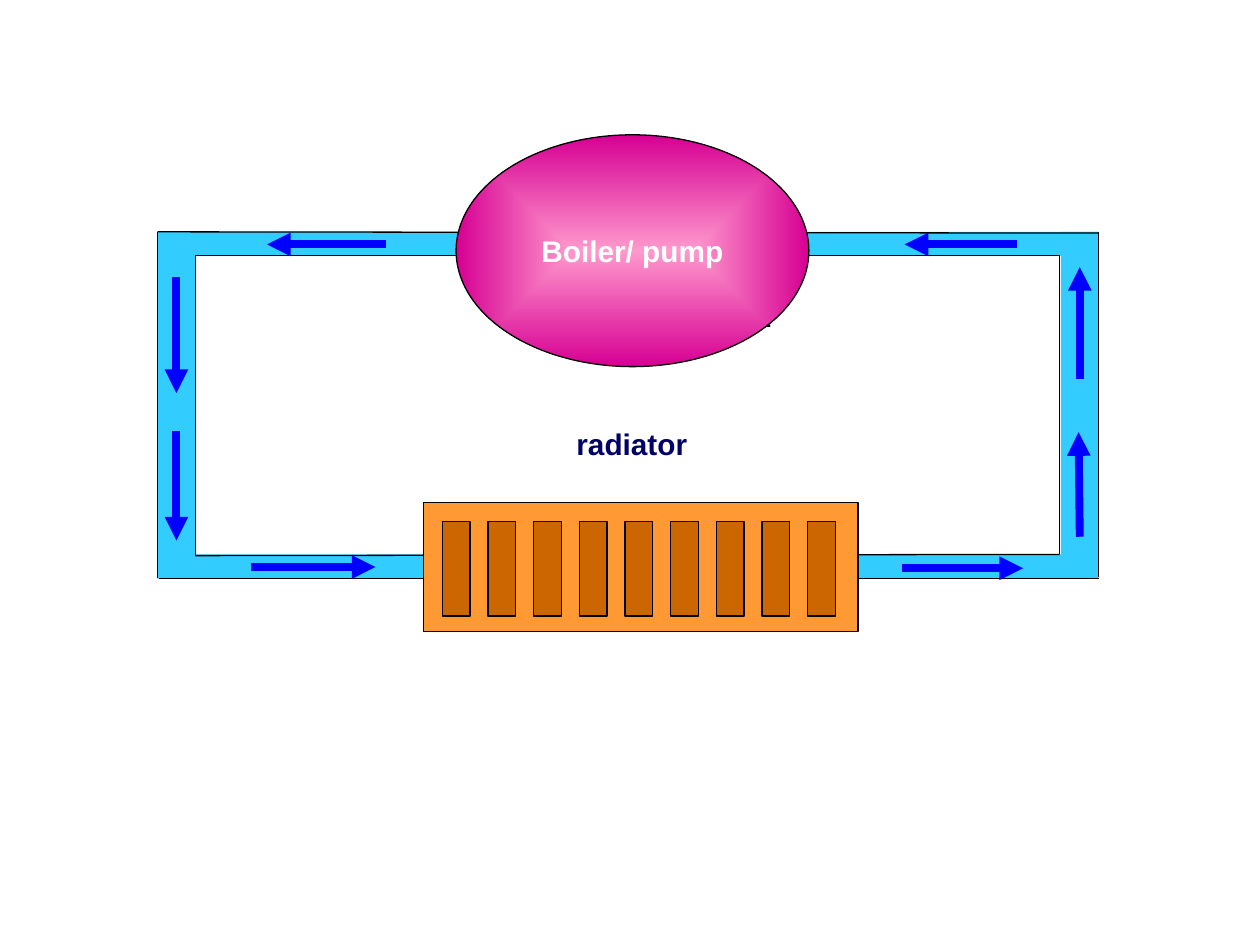
"""Build a slide showing a heating circuit with a boiler and a radiator."""
from typing import NamedTuple

from lxml.etree import SubElement
from pptx import Presentation
from pptx.dml.color import RGBColor
from pptx.enum.shapes import MSO_CONNECTOR, MSO_SHAPE
from pptx.enum.text import MSO_ANCHOR, PP_ALIGN
from pptx.oxml.ns import qn
from pptx.shapes.autoshape import Shape
from pptx.shapes.connector import Connector
from pptx.slide import Slide
from pptx.util import Inches, Pt

BLACK = RGBColor(0x00, 0x00, 0x00)
WHITE = RGBColor(0xFF, 0xFF, 0xFF)
NAVY = RGBColor(0x00, 0x00, 0x66)
FLOW_BLUE = RGBColor(0x00, 0x00, 0xFF)
WATER = RGBColor(0x33, 0xCC, 0xFF)
DEEP_WATER = RGBColor(0x24, 0x92, 0xB6)
LIGHT_PINK = RGBColor(0xFF, 0x99, 0xCC)
MAGENTA = RGBColor(0xD6, 0x00, 0x93)
ORANGE = RGBColor(0xFF, 0x99, 0x33)
BROWN = RGBColor(0xCC, 0x66, 0x00)

OUTLINE_WIDTH = 0.75
ARROW_WIDTH = 4.5
FIN_COUNT = 9
FIN_LEFT = 3.51
FIN_PITCH = 0.3625


class Area(NamedTuple):
    """A rectangle in inches."""
    left: float
    top: float
    width: float
    height: float


class Segment(NamedTuple):
    """A straight line in inches."""
    start_x: float
    start_y: float
    end_x: float
    end_y: float


PIPES = [
    Area(1.25, 1.84, 7.47, 0.19),
    Area(1.25, 4.4, 7.47, 0.19),
    Area(8.42, 1.84, 0.3, 2.75),
    Area(1.25, 1.84, 0.3, 2.75),
]
PIPE_EDGES = [
    Segment(8.41, 4.4, 8.41, 2.03),
    Segment(8.72, 1.84, 8.72, 4.58),
    Segment(8.72, 4.59, 1.26, 4.59),
    Segment(8.41, 4.4, 1.55, 4.41),
    Segment(1.25, 4.59, 1.25, 1.84),
    Segment(1.25, 1.84, 8.72, 1.85),
    Segment(8.41, 2.03, 1.55, 2.03),
    Segment(1.55, 2.03, 1.55, 4.41),
]
FLOW_ARROWS = [
    Segment(8.07, 1.94, 7.18, 1.94),
    Segment(8.57, 3.01, 8.57, 2.12),
    Segment(8.57, 4.26, 8.56, 3.43),
    Segment(7.16, 4.51, 8.12, 4.51),
    Segment(1.99, 4.5, 2.98, 4.5),
    Segment(1.4, 3.42, 1.4, 4.29),
    Segment(1.4, 2.2, 1.4, 3.12),
    Segment(3.06, 1.94, 2.12, 1.94),
]
FUNNEL_POINTS = [(4.02, 2.59), (4.55, 1.96), (5.59, 1.96), (6.11, 2.59)]


def set_outline(shape: Shape) -> None:
    """Give a shape the thin black outline."""
    shape.line.color.rgb = BLACK
    shape.line.width = Pt(OUTLINE_WIDTH)


def set_centre_gradient(shape: Shape, inner: RGBColor, outer: RGBColor) -> None:
    """Fill a shape with a gradient that runs from its centre outwards."""
    shape.fill.gradient()
    for stop, color in zip(shape.fill.gradient_stops, (inner, outer)):
        stop.color.rgb = color
    gradient = shape._element.spPr.find(qn("a:gradFill"))
    gradient.remove(gradient.find(qn("a:lin")))
    shading = SubElement(gradient, qn("a:path"), {"path": "shape"})
    sides = {side: "50000" for side in "ltrb"}
    SubElement(shading, qn("a:fillToRect"), sides)


def add_box(slide: Slide, area: Area, color: RGBColor, outlined: bool = True) -> Shape:
    """Add a plain filled rectangle."""
    box = slide.shapes.add_shape(MSO_SHAPE.RECTANGLE, *map(Inches, area))
    box.shadow.inherit = False
    box.fill.solid()
    box.fill.fore_color.rgb = color
    if outlined:
        set_outline(box)
    else:
        box.line.fill.background()
    return box


def add_line(slide: Slide, segment: Segment, color: RGBColor, width: float) -> Connector:
    """Add a straight line without a shadow."""
    line = slide.shapes.add_connector(MSO_CONNECTOR.STRAIGHT, *map(Inches, segment))
    line.line.color.rgb = color
    line.line.width = Pt(width)
    SubElement(line._element.spPr, qn("a:effectLst"))
    return line


def add_arrow(slide: Slide, segment: Segment) -> None:
    """Add an arrow for the direction of the water."""
    arrow = add_line(slide, segment, FLOW_BLUE, ARROW_WIDTH)
    SubElement(arrow.line._get_or_add_ln(), qn("a:tailEnd"), {"type": "triangle"})


def write_label(shape: Shape, text: str, color: RGBColor, anchor: MSO_ANCHOR) -> None:
    """Write a bold centred label in a shape."""
    frame = shape.text_frame
    frame.text = text
    frame.word_wrap = True
    frame.vertical_anchor = anchor
    frame.margin_left = frame.margin_right = Inches(0.07)
    frame.margin_top = frame.margin_bottom = Inches(0.04)
    para = frame.paragraphs[0]
    para.alignment = PP_ALIGN.CENTER
    para.space_after = Pt(6)
    font = para.runs[0].font
    font.name = "Arial"
    font.size = Pt(17)
    font.bold = True
    font.color.rgb = color


def add_funnel(slide: Slide) -> None:
    """Add the trapezoid behind the boiler."""
    first, *others = [(Inches(x), Inches(y)) for x, y in FUNNEL_POINTS]
    builder = slide.shapes.build_freeform(*first)
    builder.add_line_segments(others, close=True)
    funnel = builder.convert_to_shape()
    funnel.shadow.inherit = False
    set_centre_gradient(funnel, WATER, DEEP_WATER)
    set_outline(funnel)


def add_boiler(slide: Slide) -> None:
    """Add the labelled boiler ellipse."""
    area = Area(3.62, 1.07, 2.8, 1.84)
    boiler = slide.shapes.add_shape(MSO_SHAPE.OVAL, *map(Inches, area))
    boiler.shadow.inherit = False
    set_centre_gradient(boiler, LIGHT_PINK, MAGENTA)
    set_outline(boiler)
    write_label(boiler, "Boiler/ pump", WHITE, MSO_ANCHOR.MIDDLE)


def add_radiator(slide: Slide) -> None:
    """Add the radiator body and its evenly spaced fins."""
    add_box(slide, Area(3.36, 3.99, 3.45, 1.02), ORANGE)
    for index in range(FIN_COUNT):
        add_box(slide, Area(FIN_LEFT + index * FIN_PITCH, 4.14, 0.22, 0.75), BROWN)


def main() -> None:
    """Build and save the deck."""
    deck = Presentation()
    deck.slide_width, deck.slide_height = Inches(10), Inches(7.5)
    slide = deck.slides.add_slide(deck.slide_layouts.get_by_name("Blank"))
    add_funnel(slide)
    for pipe in PIPES:
        add_box(slide, pipe, WATER, outlined=False)
    for edge in PIPE_EDGES:
        add_line(slide, edge, BLACK, OUTLINE_WIDTH)
    add_boiler(slide)
    add_radiator(slide)
    for segment in FLOW_ARROWS:
        add_arrow(slide, segment)
    caption = slide.shapes.add_textbox(*map(Inches, Area(3.58, 3.34, 2.87, 0.78)))
    write_label(caption, "radiator", NAVY, MSO_ANCHOR.TOP)
    deck.save("out.pptx")


if __name__ == "__main__":
    main()
